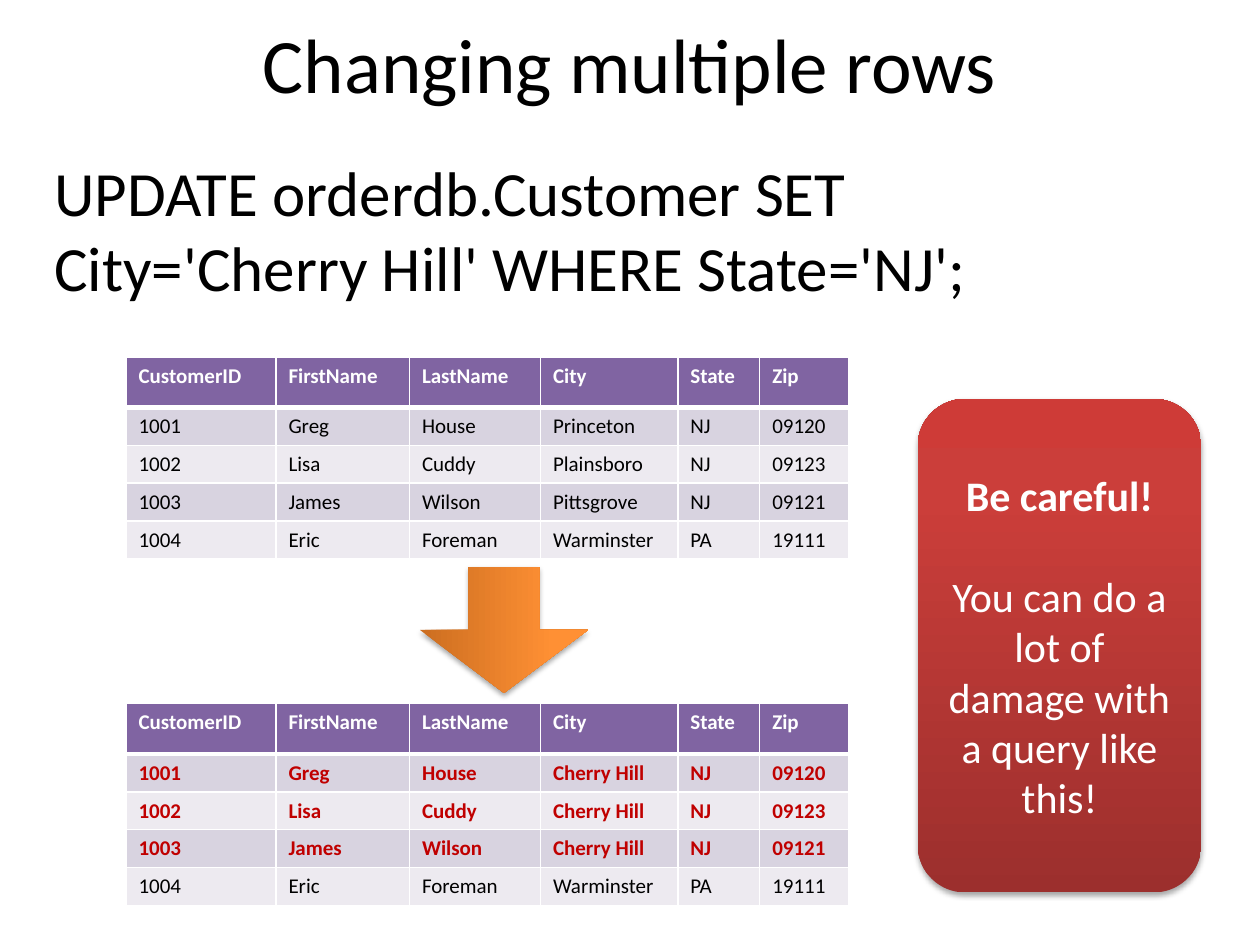
from lxml import etree
from pptx import Presentation, util as u
from pptx.dml.color import RGBColor
from pptx.enum import shapes, text
from pptx.oxml import ns

UNIT = u.Inches(1) / 12  # the layout grid has twelve units to the inch
COLUMNS = [1.19, 1.06, 1.04, 1.09, 0.65, 0.71]
HEADER_HEIGHT, ROW_HEIGHT = 0.4, 0.3
HEADER = ["CustomerID", "FirstName", "LastName", "City", "State", "Zip"]
CUSTOMERS = [
    ["1001", "Greg", "House", "Princeton", "NJ", "09120"],
    ["1002", "Lisa", "Cuddy", "Plainsboro", "NJ", "09123"],
    ["1003", "James", "Wilson", "Pittsgrove", "NJ", "09121"],
    ["1004", "Eric", "Foreman", "Warminster", "PA", "19111"],
]
WHITE, BLACK, CHANGED = "FFFFFF", "000000", "C00000"
PURPLE, BANDS = "8064A2", ["D8D3E0", "EDEAF0"]


def rgb(value):
    return RGBColor.from_string(value)


def grid(*units):
    return [u.Emu(round(n * UNIT)) for n in units]


def sub(parent, tag, **attrs):
    return etree.SubElement(parent, ns.qn(tag), {k: str(v) for k, v in attrs.items()})


def write(p, words, size, color=BLACK, bold=False, align=None):
    p.alignment = align
    r = p.add_run()
    r.text = words
    for name, value in {"name": "Calibri", "size": u.Pt(size), "bold": bold}.items():
        setattr(r.font, name, value)
    r.font.color.rgb = rgb(color)


def add_text(s, box, words, size, anchor, align=None):
    tf = s.shapes.add_textbox(*grid(*box)).text_frame
    tf.word_wrap, tf.vertical_anchor = True, anchor
    write(tf.paragraphs[0], words, size, align=align)


def set_borders(cell, **widths):
    tc_pr = cell._tc.get_or_add_tcPr()
    for side in "LRTB":
        ln = sub(tc_pr, f"a:ln{side}", w=u.Pt(widths.get(side, 1)))
        sub(sub(ln, "a:solidFill"), "a:srgbClr", val=WHITE)


def add_customers(s, col, row, customers):
    """Table of customers; rows that differ from CUSTOMERS are highlighted."""
    rows = [HEADER] + customers
    height = HEADER_HEIGHT + ROW_HEIGHT * len(customers)
    table = s.shapes.add_table(len(rows), len(HEADER), *grid(col, row),
                               u.Inches(sum(COLUMNS)), u.Inches(height)).table
    for column, width in zip(table.columns, COLUMNS):
        column.width = u.Inches(width)
    for i, values in enumerate(rows):
        table.rows[i].height = u.Inches(ROW_HEIGHT if i else HEADER_HEIGHT)
        changed = i > 0 and values != CUSTOMERS[i - 1]
        color = WHITE if i == 0 else CHANGED if changed else BLACK
        edges = {0: {"B": 3}, 1: {"T": 3}}.get(i, {})
        for j, value in enumerate(values):
            cell = table.cell(i, j)
            set_borders(cell, **edges)
            cell.fill.solid()
            cell.fill.fore_color.rgb = rgb(BANDS[(i - 1) % 2] if i else PURPLE)
            write(cell.text_frame.paragraphs[0], value, 12, color, i == 0 or changed)


def add_glossy(s, kind, box, colors):
    """Shape with an upward gradient and a soft shadow below it."""
    sp = s.shapes.add_shape(kind, *grid(*box))
    sp.line.fill.background()
    sp.shadow.inherit = False
    sp_pr = sp._element.spPr
    # Gradient
    grad = etree.Element(ns.qn("a:gradFill"), rotWithShape="1")
    stops = sub(grad, "a:gsLst")
    for share, color in zip((0, 80, 100), colors):
        sub(sub(stops, "a:gs", pos=share * 1000), "a:srgbClr", val=color)
    sub(grad, "a:lin", ang=270 * 60000, scaled=0)
    sp_pr.find(ns.qn("a:prstGeom")).addnext(grad)
    # Shadow
    shadow = sub(sp_pr.find(ns.qn("a:effectLst")), "a:outerShdw", blurRad=u.Pt(3.1),
                 dist=u.Pt(1.8), dir=90 * 60000, rotWithShape=0)
    sub(sub(shadow, "a:srgbClr", val=BLACK), "a:alpha", val=35000)
    return sp


def add_warning(s, box):
    sp = add_glossy(s, shapes.MSO_SHAPE.ROUNDED_RECTANGLE, box,
                    ["9C2F2D", "CB3E3A", "CE3B37"])
    tf = sp.text_frame
    tf.word_wrap, tf.vertical_anchor = True, text.MSO_ANCHOR.MIDDLE
    center = text.PP_ALIGN.CENTER
    write(tf.paragraphs[0], "Be careful!", 24, WHITE, True, center)
    p = tf.add_paragraph()
    p.space_before = u.Pt(29)
    write(p, "You can do a lot of damage with a query like this!", 24, WHITE, align=center)


def main():
    prs = Presentation()
    prs.slide_width, prs.slide_height = u.Inches(10), u.Inches(7.5)
    s = prs.slides.add_slide(prs.slide_layouts[6])

    # Title and query
    add_text(s, (6, 0, 108, 12), "Changing multiple rows", 44,
             text.MSO_ANCHOR.MIDDLE, text.PP_ALIGN.CENTER)
    add_text(s, (4, 14, 108, 64),
             "UPDATE orderdb.Customer SET City='Cherry Hill' WHERE State='NJ';",
             36, text.MSO_ANCHOR.TOP)

    # Customers before and after the update
    updated = [[*c[:3], "Cherry Hill", *c[4:]] if c[4] == "NJ" else c for c in CUSTOMERS]
    add_customers(s, 12, 34, CUSTOMERS)
    add_customers(s, 12, 67, updated)

    # Arrow from the first table down to the second
    arrow = add_glossy(s, shapes.MSO_SHAPE.RIGHT_ARROW, (42, 52, 12, 16),
                       ["CC6E20", "FF9034", "FF9136"])
    arrow.rotation = 90
    arrow.adjustments[0] = 0.42

    # Warning
    add_warning(s, (87.4, 38, 27, 47))
    prs.save("out.pptx")


if __name__ == "__main__":
    main()
